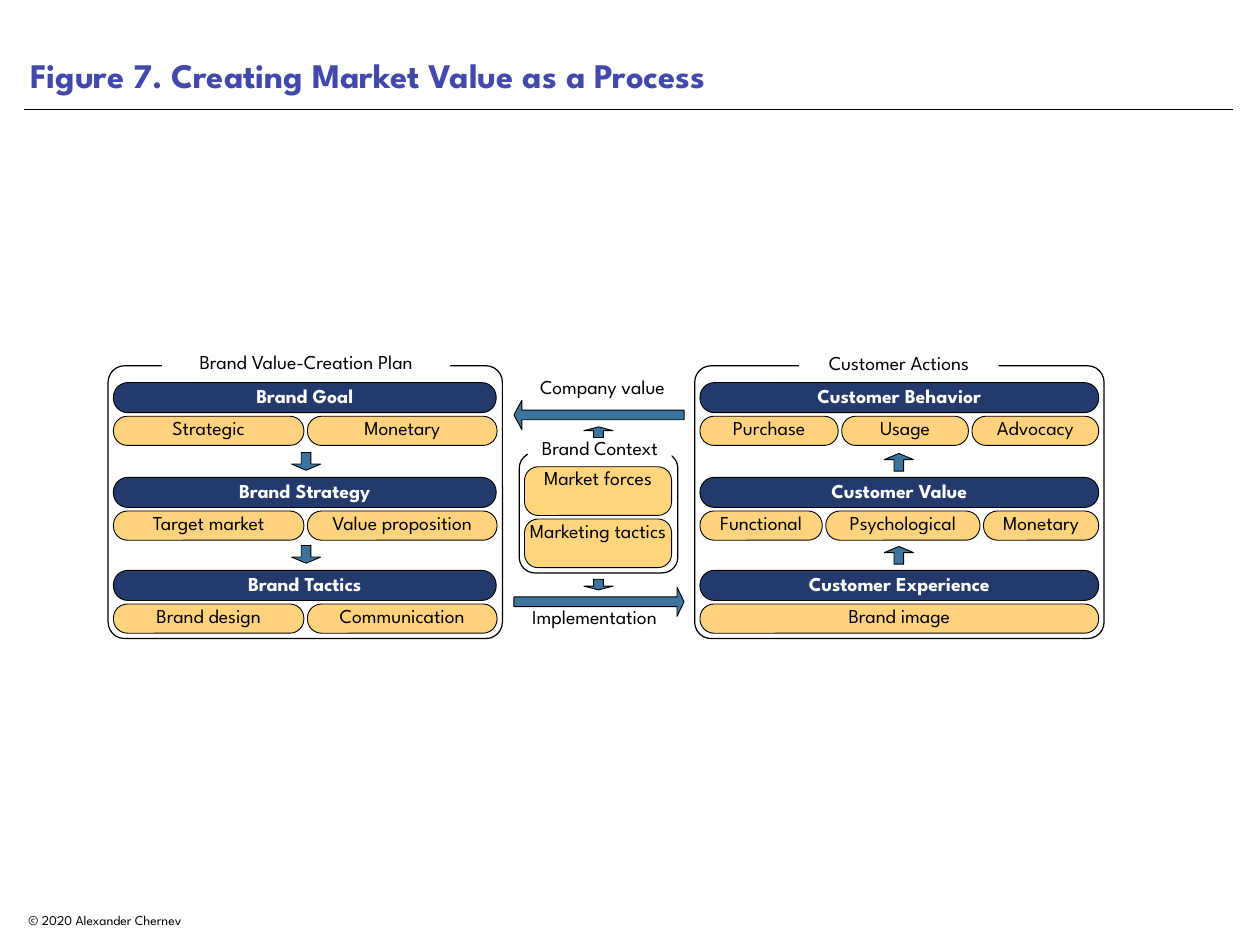
from lxml.etree import SubElement
from pptx import Presentation
from pptx.dml.color import RGBColor
from pptx.enum.shapes import MSO_CONNECTOR, MSO_SHAPE as SHAPE
from pptx.enum.text import MSO_ANCHOR as ANCHOR, MSO_AUTO_SIZE as FIT, PP_ALIGN as ALIGN
from pptx.oxml.ns import qn
from pptx.util import Pt

EMU_PER_PX = 9144
FONT = "League Spartan"
COLORS = {
    "title": "4349AA",
    "ink": "000000",
    "paper": "FFFFFF",
    "heading": "253A6C",
    "item": "FFD37D",
    "context": "FFD67E",
    "arrow": "3D749D",
}


def px(*lengths):
    return [length * EMU_PER_PX for length in lengths]


def color(name):
    return RGBColor.from_string(COLORS[name])


class Figure:
    def __init__(self, slide):
        self.slide = slide
        self.shapes = slide.shapes

    def set_text(self, shape, text, size=16, ink="ink", bold=False,
                 align=ALIGN.CENTER, anchor=ANCHOR.TOP, spacing=0.8, inset=0):
        frame = shape.text_frame
        frame.text = text
        frame.word_wrap = True
        frame.auto_size = FIT.NONE
        frame.vertical_anchor = anchor
        frame.margin_left, frame.margin_top, frame.margin_right, frame.margin_bottom = px(*[inset] * 4)
        paragraph = frame.paragraphs[0]
        paragraph.alignment = align
        paragraph.line_spacing = spacing
        font = paragraph.font
        font.name, font.size, font.bold = FONT, Pt(size), bold
        font.color.rgb = color(ink)

    def title(self, text, *box):
        title = self.shapes.title
        title.left, title.top, title.width, title.height = px(*box)
        self.set_text(title, text, 28, "title", True, ALIGN.LEFT, ANCHOR.BOTTOM, 1.0, 7)

    def rule(self, left, y, right):
        rule = self.shapes.add_connector(MSO_CONNECTOR.STRAIGHT, *px(left, y, right, y))
        rule.line.color.rgb = color("ink")
        rule.line.width = Pt(0.5)
        SubElement(rule._element.spPr, qn("a:effectLst"))

    def label(self, text, *box, **style):
        self.set_text(self.shapes.add_textbox(*px(*box)), text, **style)

    def shape(self, kind, box, fill=None, outline=0.75, adjust=()):
        shape = self.shapes.add_shape(kind, *px(*box))
        shape.shadow.inherit = False
        for index, value in enumerate(adjust):
            shape.adjustments[index] = value
        if fill:
            shape.fill.solid()
            shape.fill.fore_color.rgb = color(fill)
        else:
            shape.fill.background()
        if outline:
            shape.line.color.rgb = color("ink")
            shape.line.width = Pt(outline)
        else:
            shape.line.fill.background()
        return shape

    def arrow(self, kind, *box, head=0.35):
        self.shape(kind, box, "arrow", adjust=(0.33, head))

    def pill(self, text, *box, fill="item", rounding=0.48, **style):
        pill = self.shape(SHAPE.ROUNDED_RECTANGLE, box, fill, adjust=(rounding,))
        self.set_text(pill, text, **style)

    def panel(self, box, rounding, caption, caption_box):
        self.shape(SHAPE.ROUNDED_RECTANGLE, box, outline=1, adjust=(rounding,))
        cover = self.shape(SHAPE.RECTANGLE, caption_box, "paper", outline=0)
        self.set_text(cover, caption, anchor=ANCHOR.MIDDLE)

    def stage(self, left, top, width, heading, items):
        self.pill(heading, left, top, width, 34, fill="heading", ink="paper", bold=True, spacing=0.9)
        for text, item_width in items:
            self.pill(text, left, top + 38, item_width, 33)
            left += item_width + 4


STAGE_TOPS = (432, 539, 644)
PLAN = (
    ("Brand Goal", (("Strategic", 215), ("Monetary", 214))),
    ("Brand Strategy", (("Target market", 215), ("Value proposition", 214))),
    ("Brand Tactics", (("Brand design", 215), ("Communication", 214))),
)
CUSTOMER = (
    ("Customer Behavior", (("Purchase", 156), ("Usage", 143), ("Advocacy", 143))),
    ("Customer Value", (("Functional", 138), ("Psychological", 174), ("Monetary", 130))),
    ("Customer Experience", (("Brand image", 450),)),
)


def main():
    deck = Presentation()
    deck.slide_width, deck.slide_height = px(1422, 1067)
    figure = Figure(deck.slides.add_slide(deck.slide_layouts[5]))

    figure.rule(27, 124, 1392)
    figure.title("Figure 7. Creating Market Value as a Process", 27, 0, 1364, 115)
    figure.label("© 2020 Alexander Chernev", 25, 1023, 347, 32, size=11,
                 align=ALIGN.LEFT, anchor=ANCHOR.BOTTOM, spacing=1.0, inset=7)

    figure.panel((122, 413, 445, 308), 0.06, "Brand Value-Creation Plan", (183, 395, 325, 32))
    figure.panel((784, 413, 462, 308), 0.06, "Customer Actions", (902, 396, 225, 32))
    for top, plan, customer in zip(STAGE_TOPS, PLAN, CUSTOMER):
        figure.stage(128, top, 432, *plan)
        figure.stage(790, top, 450, *customer)
    for top in STAGE_TOPS[1:]:
        figure.arrow(SHAPE.DOWN_ARROW, 329, top - 28, 33, 20)
        figure.arrow(SHAPE.UP_ARROW, 998, top - 27, 33, 20)

    figure.label("Company value", 582, 428, 196, 32)
    figure.arrow(SHAPE.LEFT_ARROW, 580, 452, 192, 33, head=0.27)
    figure.arrow(SHAPE.RIGHT_ARROW, 580, 663, 192, 33, head=0.24)
    figure.label("Implementation", 573, 688, 196, 32)

    figure.panel((586, 511, 179, 136), 0.13, "Brand Context", (596, 492, 162, 32))
    for row, text in enumerate(("Market forces", "Marketing tactics")):
        figure.pill(text, 592, 527 + 59 * row, 166, 55, fill="context", rounding=0.28)
    figure.arrow(SHAPE.UP_ARROW, 659, 482, 33, 12)
    figure.arrow(SHAPE.DOWN_ARROW, 659, 654, 33, 12)

    deck.save("out.pptx")


if __name__ == "__main__":
    main()
